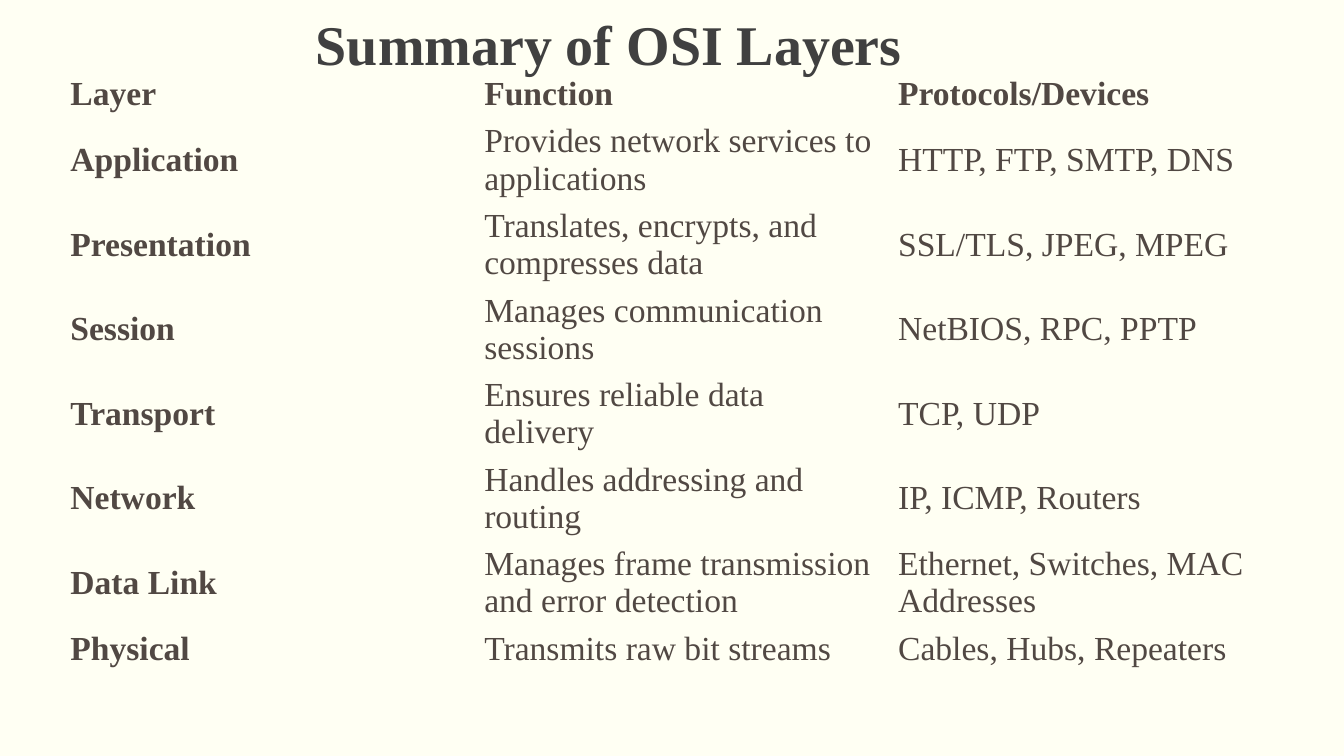
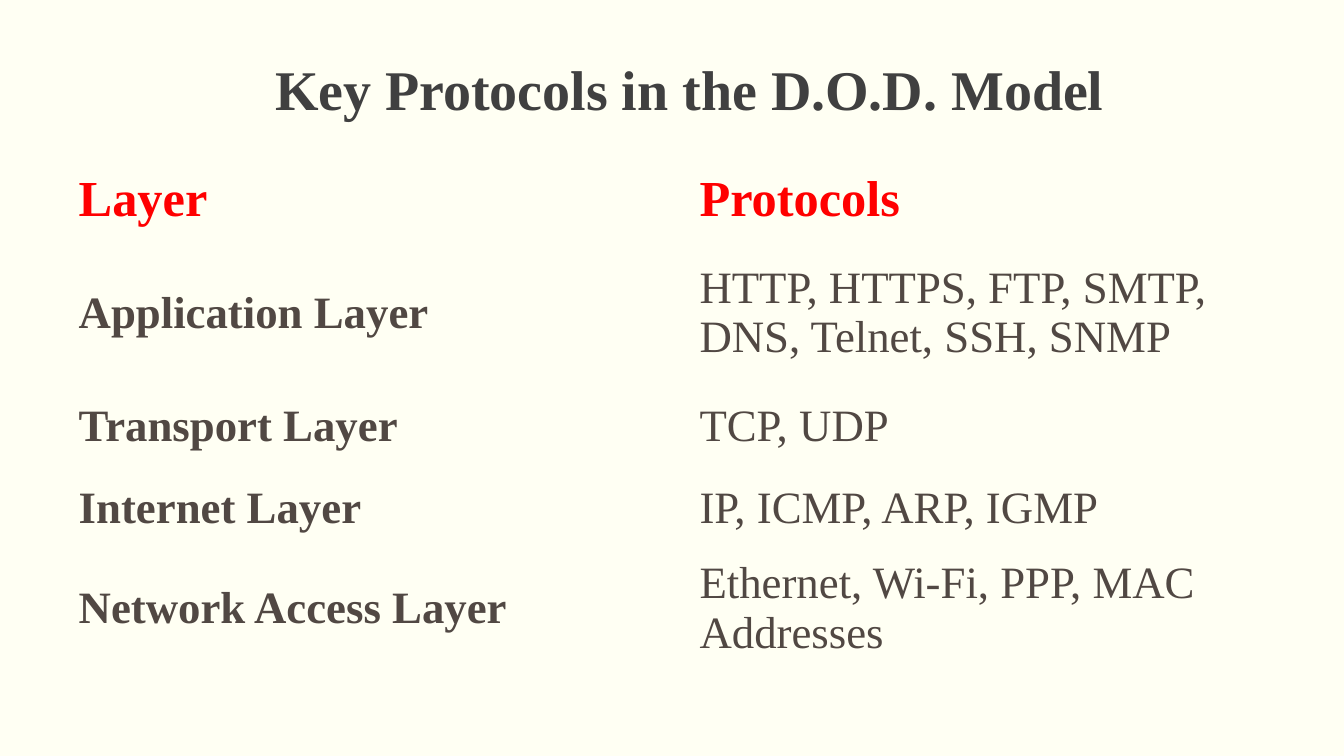
from pptx import Presentation
from pptx.dml.color import RGBColor
from pptx.enum.text import MSO_ANCHOR, MSO_AUTO_SIZE, PP_ALIGN
from pptx.oxml.ns import qn
from pptx.util import Cm, Pt

MIDDLE = MSO_ANCHOR.MIDDLE
CENTER = PP_ALIGN.CENTER
NO_AUTOFIT = MSO_AUTO_SIZE.NONE
TITLE_ONLY = 5
NO_STYLE_NO_GRID = "{2D5ABB26-0587-4C30-8999-92F81FD0307C}"

FONT = "Times New Roman"
PAPER, TITLE_GREY, BODY_BROWN, RED = "FFFFF3", "404040", "514843", "FF0000"
TITLE_SIZE = 40
TABLE_WIDTH = 31.29
ONE_LINE, TWO_LINES = 1.19, 2.13
TALL_LINE = 2.08

SLIDES = [
    {
        "title": "Summary of OSI Layers",
        "title_box": (2.08, 0, 26.52, 2.16),
        "table_corner": (1.52, 1.78),
        "header_style": (24, BODY_BROWN),
        "body_size": 24,
        "row_heights": [ONE_LINE] + [TWO_LINES] * 6 + [ONE_LINE],
        "rows": [
            ("Layer", "Function", "Protocols/Devices"),
            ("Application", "Provides network services to applications", "HTTP, FTP, SMTP, DNS"),
            ("Presentation", "Translates, encrypts, and compresses data", "SSL/TLS, JPEG, MPEG"),
            ("Session", "Manages communication sessions", "NetBIOS, RPC, PPTP"),
            ("Transport", "Ensures reliable data delivery", "TCP, UDP"),
            ("Network", "Handles addressing and routing", "IP, ICMP, Routers"),
            ("Data Link", "Manages frame transmission and error detection",
             "Ethernet, Switches, MAC Addresses"),
            ("Physical", "Transmits raw bit streams", "Cables, Hubs, Repeaters"),
        ],
    },
    {
        "title": "Key Protocols in the D.O.D. Model",
        "title_box": (1.73, 1.24, TABLE_WIDTH, 1.96),
        "table_corner": (1.73, 3.99),
        "header_style": (36, RED),
        "body_size": 32,
        "row_heights": [TALL_LINE, 3.63, TALL_LINE, TALL_LINE, 2.95],
        "rows": [
            ("Layer", "Protocols"),
            ("Application Layer", "HTTP, HTTPS, FTP, SMTP, DNS, Telnet, SSH, SNMP"),
            ("Transport Layer", "TCP, UDP"),
            ("Internet Layer", "IP, ICMP, ARP, IGMP"),
            ("Network Access Layer", "Ethernet, Wi-Fi, PPP, MAC Addresses"),
        ],
    },
]


def rgb(hex_color):
    """Turn a hex string into a colour."""
    return RGBColor.from_string(hex_color)


def write(frame, text, size, color, bold):
    """Put one styled paragraph into a text frame and return it."""
    frame.text = text
    paragraph = frame.paragraphs[0]
    font = paragraph.runs[0].font
    font.name, font.size, font.bold = FONT, Pt(size), bold
    font.color.rgb = rgb(color)
    return paragraph


def add_title(slide, text, box):
    """Place and format the title placeholder."""
    title = slide.shapes.title
    title.left, title.top, title.width, title.height = map(Cm, box)
    frame = title.text_frame
    frame.word_wrap = True
    frame.auto_size = NO_AUTOFIT
    frame.vertical_anchor = MIDDLE
    write(frame, text, TITLE_SIZE, TITLE_GREY, True).alignment = CENTER


def add_layer_table(slide, content):
    """Add a plain table with equal columns and a bold first row and column."""
    rows, heights = content["rows"], content["row_heights"]
    left, top = content["table_corner"]
    column_count = len(rows[0])
    table = slide.shapes.add_table(len(rows), column_count, Cm(left), Cm(top),
                                   Cm(TABLE_WIDTH), Cm(sum(heights))).table
    table.first_row = table.horz_banding = False
    table._tbl.tblPr.find(qn("a:tableStyleId")).text = NO_STYLE_NO_GRID
    for column in table.columns:
        column.width = Cm(TABLE_WIDTH / column_count)
    for r, (texts, height) in enumerate(zip(rows, heights)):
        table.rows[r].height = Cm(height)
        size, color = (content["body_size"], BODY_BROWN) if r else content["header_style"]
        for c, text in enumerate(texts):
            cell = table.cell(r, c)
            cell.fill.background()
            cell.vertical_anchor = MIDDLE
            write(cell.text_frame, text, size, color, r == 0 or c == 0)


def main():
    """Build and save the slides."""
    deck = Presentation()
    deck.slide_width, deck.slide_height = Cm(33.87), Cm(19.05)
    paper = deck.slide_master.background.fill
    paper.solid()
    paper.fore_color.rgb = rgb(PAPER)
    for content in SLIDES:
        slide = deck.slides.add_slide(deck.slide_layouts[TITLE_ONLY])
        add_title(slide, content["title"], content["title_box"])
        add_layer_table(slide, content)
    deck.save("out.pptx")


if __name__ == "__main__":
    main()
